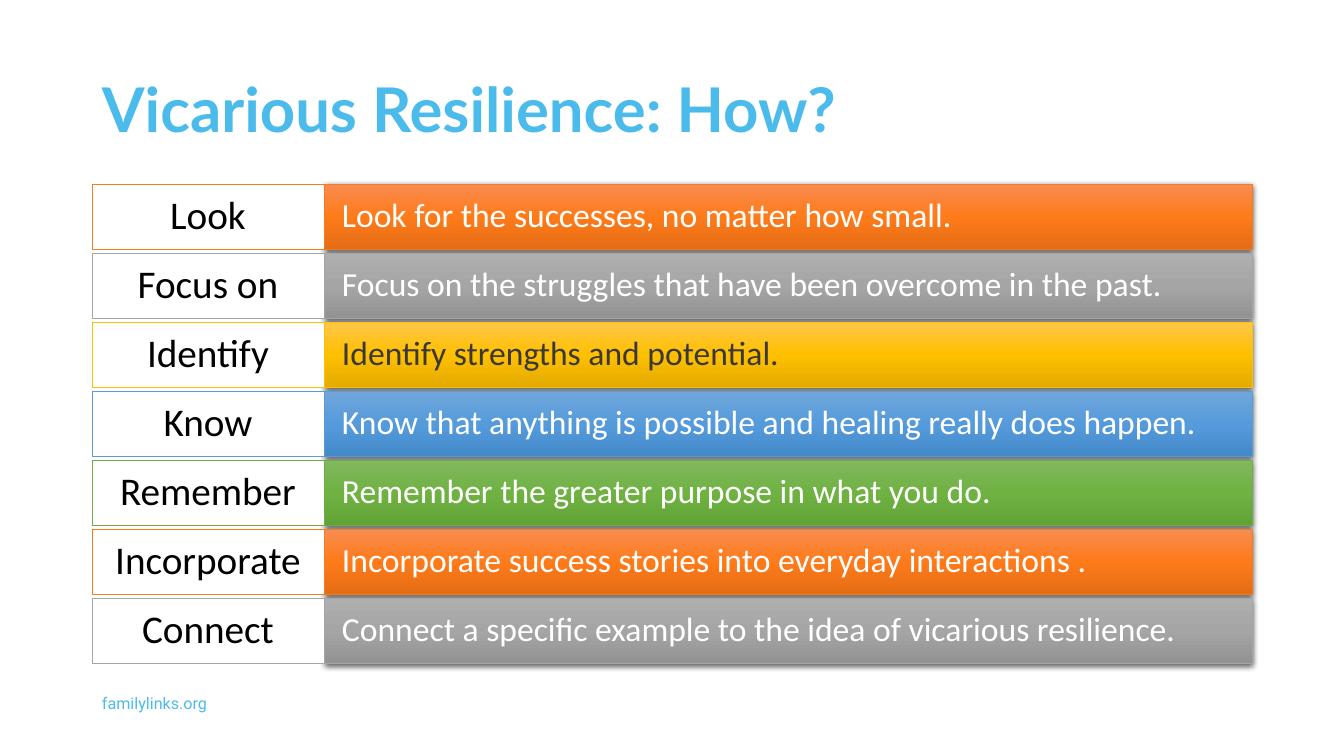
import copy
from dataclasses import dataclass

import pptx
import pptx.dml.color
import pptx.enum.shapes
import pptx.enum.text
import pptx.oxml
import pptx.oxml.ns
import pptx.util

SLIDE_WIDTH, SLIDE_HEIGHT = 1344, 756
EMU_PER_PX = 12192000 / SLIDE_WIDTH
ALIGN = pptx.enum.text.PP_ALIGN
ANCHOR = pptx.enum.text.MSO_ANCHOR


@dataclass(frozen=True)
class Theme:
    """Colours, fonts and type sizes of the slide."""
    accent: str = "4BBBEB"
    white: str = "FFFFFF"
    black: str = "000000"
    dark: str = "3B3838"
    title_font: str = "Lato"
    body_font: str = "Calibri"
    footer_font: str = "Roboto"
    title_size: float = 44
    label_size: float = 28
    advice_size: float = 24
    footer_size: float = 11.5
    line_width: float = 0.5


THEME = Theme()

BANDS = {
    "orange": ("F47D24", ("F88C51", "FE7B1A", "E56D14"), THEME.white),
    "gray": ("A5A5A5", ("AFAFAF", "A5A5A5", "939393"), THEME.white),
    "gold": ("FFC000", ("FFC64B", "FFC000", "E3AB00"), THEME.dark),
    "blue": ("5B9BD5", ("71A6DB", "559BDB", "448ACA"), THEME.white),
    "green": ("70AD47", ("81B861", "6FB242", "62A336"), THEME.white),
}

STEPS = [
    ("Look", "Look for the successes, no matter how small."),
    ("Focus on", "Focus on the struggles that have been overcome in the past."),
    ("Identify", "Identify strengths and potential."),
    ("Know", "Know that anything is possible and healing really does happen."),
    ("Remember", "Remember the greater purpose in what you do."),
    ("Incorporate", "Incorporate success stories into everyday interactions ."),
    ("Connect", "Connect a specific example to the idea of vicarious resilience."),
]


def px(length):
    """Turn pixels into EMU."""
    return pptx.util.Emu(round(length * EMU_PER_PX))


def rgb(color):
    """Turn a hexadecimal string into a colour."""
    return pptx.dml.color.RGBColor.from_string(color)


def write_text(shape, text, *, font, size, color, bold=False, align=ALIGN.LEFT,
               anchor=ANCHOR.TOP, inset=(10, 5), line_spacing=1.0):
    """Write one formatted paragraph into a shape."""
    frame = shape.text_frame
    frame.word_wrap = True
    frame.vertical_anchor = anchor
    frame.margin_left = frame.margin_right = px(inset[0])
    frame.margin_top = frame.margin_bottom = px(inset[1])
    paragraph = frame.paragraphs[0]
    paragraph.alignment = align
    paragraph.line_spacing = line_spacing
    run = paragraph.add_run()
    run.text = text
    run.font.name = font
    run.font.size = pptx.util.Pt(size)
    run.font.bold = bold
    run.font.color.rgb = rgb(color)


def add_box(slide, box, line_color):
    """Add an outlined rectangle without a shadow."""
    shape = slide.shapes.add_shape(
        pptx.enum.shapes.MSO_SHAPE.RECTANGLE, *map(px, box))
    shape.shadow.inherit = False
    shape.line.color.rgb = rgb(line_color)
    shape.line.width = pptx.util.Pt(THEME.line_width)
    return shape


def fill_gradient(shape, colors):
    """Fill a shape with evenly spaced colours from top to bottom."""
    shape.fill.gradient()
    shape.fill.gradient_angle = 270
    stops = shape.element.spPr.find(".//" + pptx.oxml.ns.qn("a:gsLst"))
    while len(stops) < len(colors):
        stops.append(copy.deepcopy(stops[-1]))
    for index, (stop, color) in enumerate(zip(shape.fill.gradient_stops, colors)):
        stop.position = index / (len(colors) - 1)
        stop.color.rgb = rgb(color)


def add_shadow(shape):
    """Give a shape a soft shadow below it."""
    effects = shape.element.spPr.find(pptx.oxml.ns.qn("a:effectLst"))
    effects.append(pptx.oxml.parse_xml(
        f'<a:outerShdw {pptx.oxml.ns.nsdecls("a")} blurRad="57150" dist="19050" '
        'dir="5400000" algn="ctr" rotWithShape="0">'
        f'<a:srgbClr val="{THEME.black}"><a:alpha val="63000"/></a:srgbClr>'
        '</a:outerShdw>'))


def add_footer(slide, box):
    """Place the web address."""
    write_text(slide.shapes.add_textbox(*map(px, box)), "familylinks.org",
               font=THEME.footer_font, size=THEME.footer_size, color=THEME.accent)


def add_title(slide, box):
    """Place the slide title."""
    write_text(slide.shapes.add_textbox(*map(px, box)), "Vicarious Resilience: How?",
               font=THEME.title_font, size=THEME.title_size, color=THEME.accent,
               bold=True, anchor=ANCHOR.MIDDLE, line_spacing=0.9)


def add_step(slide, box, label, advice, band):
    """Place one row: a coloured advice bar and its white label."""
    left, top, width, height = box
    label_width = round(width / 5)
    line_color, gradient, text_color = band
    bar = add_box(slide, (left + label_width, top, width - label_width, height),
                  line_color)
    fill_gradient(bar, gradient)
    add_shadow(bar)
    write_text(bar, advice, font=THEME.body_font, size=THEME.advice_size,
               color=text_color, anchor=ANCHOR.MIDDLE, inset=(18, 16),
               line_spacing=0.9)
    tag = add_box(slide, (left, top, label_width, height), line_color)
    tag.fill.solid()
    tag.fill.fore_color.rgb = rgb(THEME.white)
    write_text(tag, label, font=THEME.body_font, size=THEME.label_size,
               color=THEME.black, align=ALIGN.CENTER, anchor=ANCHOR.MIDDLE,
               inset=(12, 6), line_spacing=0.9)


def add_steps(slide, box, gap):
    """Stack all the steps in equal rows, cycling through the bands."""
    left, top, width, height = box
    row_height = (height + gap) // len(STEPS) - gap
    bands = list(BANDS.values())
    for index, (label, advice) in enumerate(STEPS):
        row = (left, top + index * (row_height + gap), width, row_height)
        add_step(slide, row, label, advice, bands[index % len(bands)])


def main():
    """Build and save the presentation."""
    presentation = pptx.Presentation()
    presentation.slide_width = px(SLIDE_WIDTH)
    presentation.slide_height = px(SLIDE_HEIGHT)
    slide = presentation.slides.add_slide(presentation.slide_layouts[6])
    add_footer(slide, (92, 688, 211, 30))
    add_title(slide, (92, 40, 1159, 146))
    add_steps(slide, (92, 184, 1160, 479), gap=4)
    presentation.save("out.pptx")


if __name__ == "__main__":
    main()
